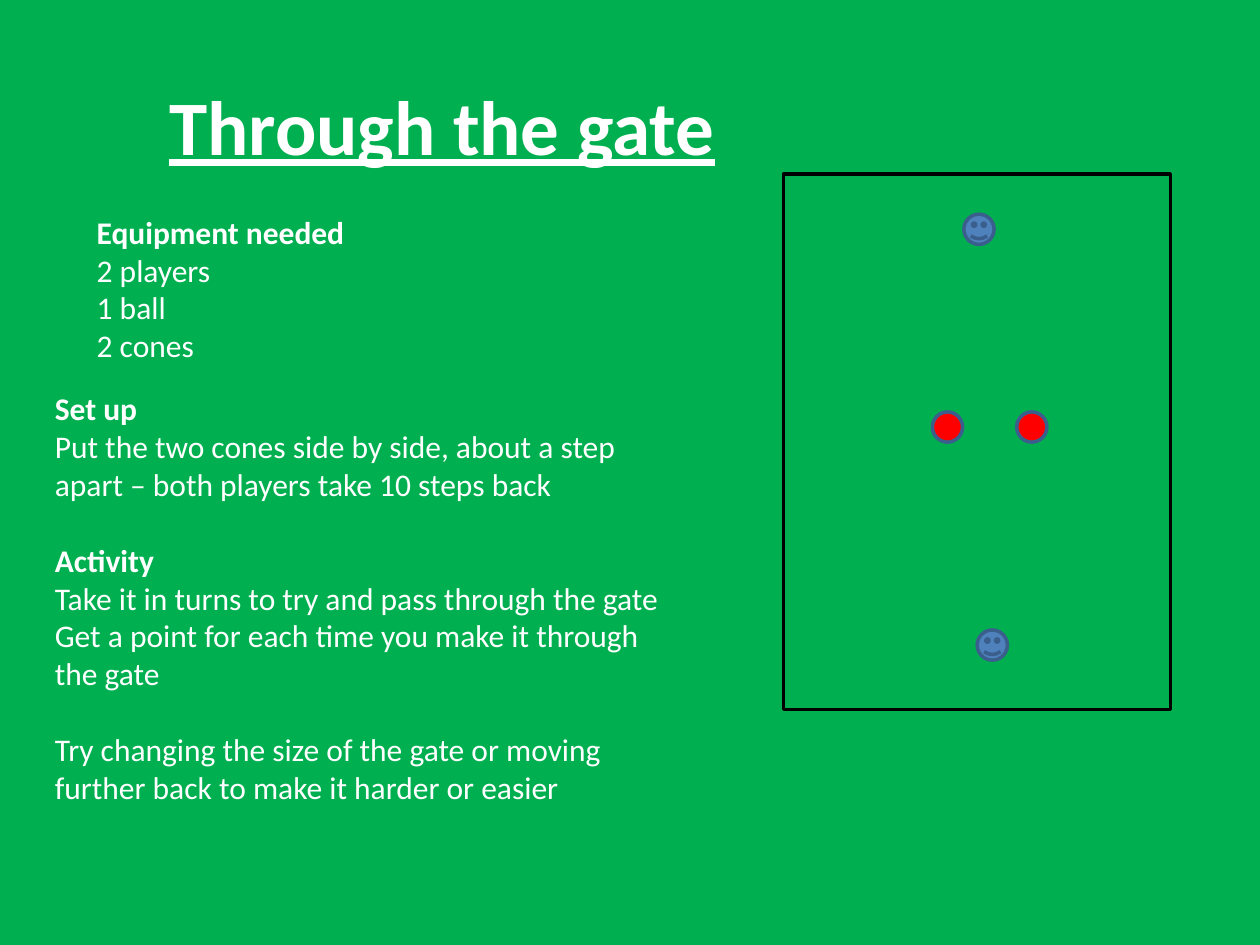
from dataclasses import dataclass

from pptx import Presentation
from pptx.dml.color import RGBColor
from pptx.enum.shapes import MSO_SHAPE
from pptx.enum.text import MSO_ANCHOR, MSO_AUTO_SIZE, PP_ALIGN
from pptx.util import Pt


@dataclass(frozen=True)
class Theme:
    font: str = "Calibri"
    grass: str = "00B050"
    text: str = "FFFFFF"
    pitch_line: str = "000000"
    marker_line: str = "3A5F8C"
    cone: str = "FF0000"
    player: str = "4F81BD"
    title_size: float = 44
    body_size: float = 18
    section_gap: float = 21.7
    line_width: float = 2


class SlideBuilder:
    def __init__(self, deck, theme):
        self.theme = theme
        self.page = deck.slides.add_slide(deck.slide_layouts[5])
        self.fill(self.page.background, theme.grass)

    def fill(self, target, color):
        target.fill.solid()
        target.fill.fore_color.rgb = RGBColor.from_string(color)

    def add_span(self, para, text, size, bold=False, underline=False):
        span = para.add_run()
        span.text = text
        font = span.font
        font.name, font.size = self.theme.font, Pt(size)
        font.bold, font.underline = bold, underline
        font.color.rgb = RGBColor.from_string(self.theme.text)

    def title(self, text, left, top, width, height):
        box = self.page.shapes.title
        box.left, box.top, box.width, box.height = map(Pt, (left, top, width, height))
        frame = box.text_frame
        frame.auto_size = MSO_AUTO_SIZE.NONE
        frame.vertical_anchor = MSO_ANCHOR.MIDDLE
        para = frame.paragraphs[0]
        para.alignment = PP_ALIGN.CENTER
        self.add_span(para, text, self.theme.title_size, bold=True, underline=True)

    def text(self, sections, left, top, width, height):
        """Each section is a heading (or None) and its lines."""
        box = self.page.shapes.add_textbox(*map(Pt, (left, top, width, height)))
        frame = box.text_frame
        frame.word_wrap = True
        frame.auto_size = MSO_AUTO_SIZE.SHAPE_TO_FIT_TEXT
        para = None
        for heading, lines in sections:
            entries = [(heading, True)] if heading else []
            entries += [(line, False) for line in lines]
            for position, (line, bold) in enumerate(entries):
                starts_gap = para is not None and position == 0
                para = frame.paragraphs[0] if para is None else frame.add_paragraph()
                if starts_gap:
                    para.space_before = Pt(self.theme.section_gap)
                self.add_span(para, line, self.theme.body_size, bold=bold)

    def shape(self, kind, left, top, width, height, color, line):
        shape = self.page.shapes.add_shape(kind, *map(Pt, (left, top, width, height)))
        shape.shadow.inherit = False
        self.fill(shape, color)
        shape.line.color.rgb = RGBColor.from_string(line)
        shape.line.width = Pt(self.theme.line_width)

    def marker(self, kind, left, top, color, size=17.3):
        self.shape(kind, left, top, size, size, color, self.theme.marker_line)


def main():
    deck = Presentation()
    deck.slide_width, deck.slide_height = Pt(720), Pt(540)
    theme = Theme()
    slide = SlideBuilder(deck, theme)

    # Title and equipment list
    slide.title("Through the gate", 25.2, 13, 455, 116)
    slide.text(
        [("Equipment needed", ["2 players", "1 ball", "2 cones"])],
        48.2, 118.1, 374.4, 138.2,
    )

    # Pitch with the gate between two players
    slide.shape(MSO_SHAPE.RECTANGLE, 447.8, 99.4, 221, 306, theme.grass, theme.pitch_line)
    for left in (581, 532.8):
        slide.marker(MSO_SHAPE.OVAL, left, 235.4, theme.cone)
    for left, top in ((550.8, 122.4), (558.4, 360)):
        slide.marker(MSO_SHAPE.SMILEY_FACE, left, top, theme.player)

    # Instructions
    slide.text(
        [
            ("Set up", [
                "Put the two cones side by side, about a step apart – "
                "both players take 10 steps back",
            ]),
            ("Activity", [
                "Take it in turns to try and pass through the gate",
                "Get a point for each time you make it through the gate",
            ]),
            (None, [
                "Try changing the size of the gate or moving further back "
                "to make it harder or easier",
            ]),
        ],
        24.3, 219, 360, 269.3,
    )

    deck.save("out.pptx")


if __name__ == "__main__":
    main()
